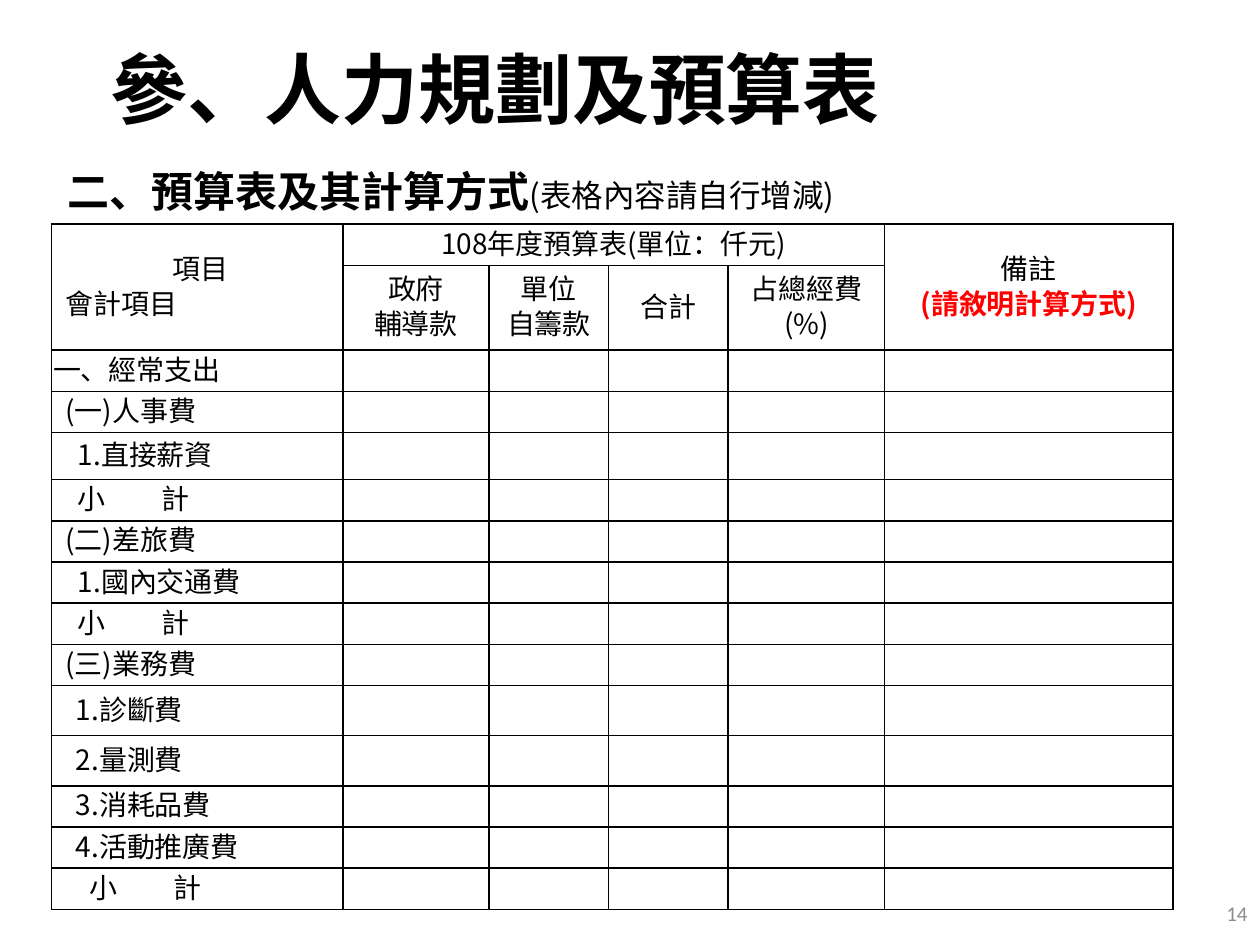
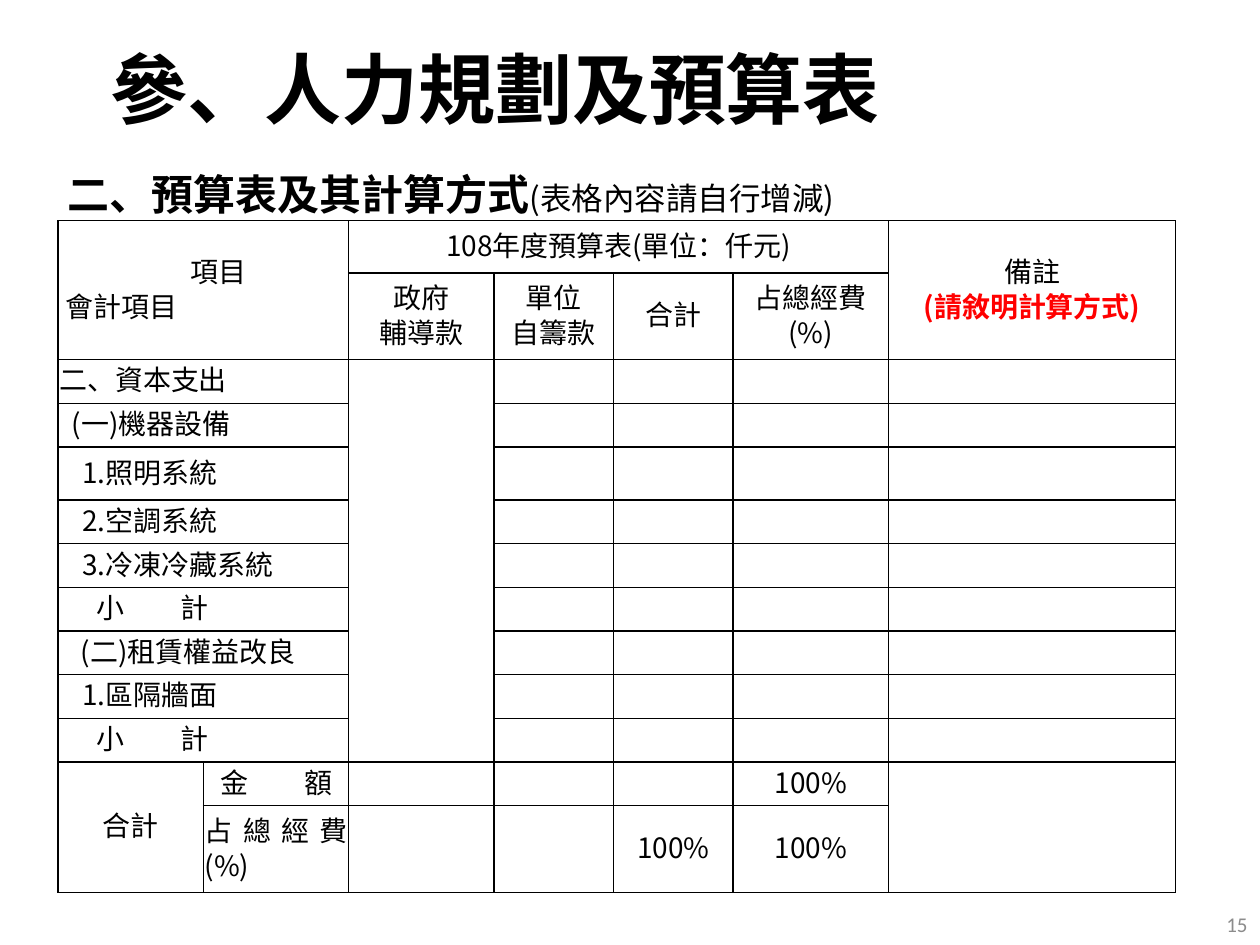
from lxml.etree import SubElement
from pptx import Presentation
from pptx.dml.color import RGBColor
from pptx.enum.text import MSO_ANCHOR as Anchor, PP_ALIGN as Align
from pptx.oxml.ns import qn
from pptx.util import Cm, Pt

BLACK = RGBColor(0x00, 0x00, 0x00)
RED = RGBColor(0xFF, 0x00, 0x00)
GRAY = RGBColor(0x8C, 0x8C, 0x8C)
CJK_FONT = "Noto Sans CJK SC"
NUMBER_FONT = "Calibri"

TITLE = "參、人力規劃及預算表"
SUBTITLE = "二、預算表及其計算方式"
SUBTITLE_NOTE = "(表格內容請自行增減)"
SPREAD_WORDS = ("小計", "金額")  # two characters set two character widths apart
AMOUNT_HEADERS = ["政府\n輔導款", "單位\n自籌款", "合計", "占總經費(%)"]

# Lengths are in centimetres; a label is (indent, text).
BUDGETS = [
    {
        "number": 14, "number_top": 18.03, "subtitle_top": 2.72,
        "left": 1.04, "top": 4.52,
        "columns": [5.87, 2.95, 2.41, 2.41, 3.15, 5.82],
        "row_height": 0.83, "tall_rows": {1: 1.71, 4: 0.95, 10: 1.01, 11: 1.01},
        "corner_indents": (2.4, 0.25),
        "labels": [
            (0, "一、經常支出"), (0.25, "(一)人事費"), (0.5, "1.直接薪資"), (0.5, "小計"),
            (0.25, "(二)差旅費"), (0.5, "1.國內交通費"), (0.5, "小計"),
            (0.25, "(三)業務費"), (0.46, "1.診斷費"), (0.46, "2.量測費"),
            (0.46, "3.消耗品費"), (0.46, "4.活動推廣費"), (0.74, "小計"),
        ],
        "merges": [],
        "totals": {},
    },
    {
        "number": 15, "number_top": 18.24, "subtitle_top": 2.79,
        "left": 1.17, "top": 4.45,
        "columns": [2.93, 2.93, 2.93, 2.41, 2.41, 3.13, 5.79],
        "row_height": 0.88, "tall_rows": {0: 1.05, 1: 1.75, 4: 1.07, 12: 1.75},
        "corner_indents": (2.65, 0.13),
        "labels": [
            (0, "二、資本支出"), (0.25, "(一)機器設備"), (0.46, "1.照明系統"),
            (0.46, "2.空調系統"), (0.46, "3.冷凍冷藏系統"), (0.74, "小計"),
            (0.43, "(二)租賃權益改良"), (0.46, "1.區隔牆面"), (0.74, "小計"),
        ],
        "merges": [(2, 2, 10, 2), (11, 0, 12, 0), (11, 6, 12, 6)]
        + [(row, 0, row, 1) for row in range(2, 11)],
        "totals": {
            (11, 0): "合計", (11, 1): "金額", (11, 5): "100%",
            (12, 1): "占總經費(%)", (12, 4): "100%", (12, 5): "100%",
        },
    },
]


def write(paragraph, text, size, align=Align.LEFT, indent=0, color=BLACK, bold=False,
          name=CJK_FONT):
    """Fill one paragraph, with the same typeface for Latin and East Asian text."""
    paragraph.alignment = align
    if indent:
        paragraph._p.get_or_add_pPr().set("marL", str(Cm(indent)))
    font = paragraph.font
    font.size, font.bold, font.name = Pt(size), bold, name
    font.color.rgb = color
    SubElement(font._element, qn("a:ea")).set("typeface", name)
    if text in SPREAD_WORDS:
        first = paragraph.add_run()
        first.text = text[0]
        first.font._element.set("spc", str(2 * size * 100))
        text = text[1]
    if text:
        paragraph.add_run().text = text


def add_text_box(slide, left, top, width, height, anchor):
    frame = slide.shapes.add_textbox(Cm(left), Cm(top), Cm(width), Cm(height)).text_frame
    frame.word_wrap = True
    frame.vertical_anchor = anchor
    frame.margin_left = frame.margin_right = Cm(0.19)
    frame.margin_top = frame.margin_bottom = Cm(0.1)
    return frame


presentation = Presentation()
presentation.slide_width, presentation.slide_height = Cm(25.4), Cm(19.05)

for budget in BUDGETS:
    slide = presentation.slides.add_slide(presentation.slide_layouts[6])

    title = add_text_box(slide, 2.03, 0.05, 21.9, 3.68, Anchor.MIDDLE).paragraphs[0]
    title.line_spacing = 0.9
    write(title, TITLE, 44, bold=True)

    subtitle = add_text_box(slide, 1.17, budget["subtitle_top"], 21.9, 12.09,
                            Anchor.TOP).paragraphs[0]
    subtitle.line_spacing = 1.5
    subtitle.space_before = Pt(10)
    write(subtitle, SUBTITLE, 24, bold=True)
    note = subtitle.add_run()
    note.text = SUBTITLE_NOTE
    note.font.size, note.font.bold = Pt(18), False

    number_frame = add_text_box(slide, 19.69, budget["number_top"], 5.71, 0.76, Anchor.MIDDLE)
    number_frame.margin_right = Cm(0.25)
    write(number_frame.paragraphs[0], str(budget["number"]), 12, Align.RIGHT,
          color=GRAY, name=NUMBER_FONT)

    columns = budget["columns"]
    row_count = len(budget["labels"]) + 2 + (2 if budget["totals"] else 0)
    heights = [budget["tall_rows"].get(row, budget["row_height"]) for row in range(row_count)]
    table = slide.shapes.add_table(
        row_count, len(columns), Cm(budget["left"]), Cm(budget["top"]),
        Cm(sum(columns)), Cm(sum(heights))).table
    table.first_row = table.horz_banding = False
    for column, width in zip(table.columns, columns):
        column.width = Cm(width)
    for row, height in zip(table.rows, heights):
        row.height = Cm(height)

    # Each cell holds a list of (text, alignment, indent, colour, bold) lines.
    first_amount, remarks = len(columns) - 5, len(columns) - 1
    item_indent, account_indent = budget["corner_indents"]
    content = {
        (0, 0): [("項目", Align.LEFT, item_indent, BLACK, False),
                 ("會計項目", Align.LEFT, account_indent, BLACK, False)],
        (0, remarks): [("備註", Align.CENTER, 0, BLACK, False),
                       ("(請敘明計算方式)", Align.CENTER, 0, RED, True)],
    }
    for row, (indent, text) in enumerate(budget["labels"], start=2):
        content[row, 0] = [(text, Align.LEFT, indent, BLACK, False)]
    centered = {(0, first_amount): "108年度預算表(單位：仟元)", **budget["totals"]}
    for column, text in enumerate(AMOUNT_HEADERS, start=first_amount):
        centered[1, column] = text
    for place, text in centered.items():
        align = Align.JUSTIFY if place == (12, 1) else Align.CENTER
        content[place] = [(line, align, 0, BLACK, False) for line in text.split("\n")]

    for row in range(row_count):
        for column in range(len(columns)):
            cell = table.cell(row, column)
            cell.vertical_anchor = Anchor.MIDDLE
            cell.margin_left = cell.margin_right = Cm(0.03)
            cell.margin_top = cell.margin_bottom = 0
            properties = cell._tc.get_or_add_tcPr()
            for side in ("a:lnL", "a:lnR", "a:lnT", "a:lnB"):
                border = SubElement(properties, qn(side), w=str(Pt(1)))
                fill = SubElement(border, qn("a:solidFill"))
                SubElement(fill, qn("a:srgbClr"), val=str(BLACK))
            cell.fill.background()
            lines = content.get((row, column), [("", Align.LEFT, 0, BLACK, False)])
            for index, (text, align, indent, color, bold) in enumerate(lines):
                frame = cell.text_frame
                paragraph = frame.add_paragraph() if index else frame.paragraphs[0]
                paragraph.line_spacing = Pt(20)
                write(paragraph, text, 16, align, indent, color, bold)

    header_merges = [(0, 0, 1, first_amount - 1), (0, first_amount, 0, remarks - 1),
                     (0, remarks, 1, remarks)]
    for top, left, bottom, right in header_merges + budget["merges"]:
        table.cell(top, left).merge(table.cell(bottom, right))

presentation.save("out.pptx")
